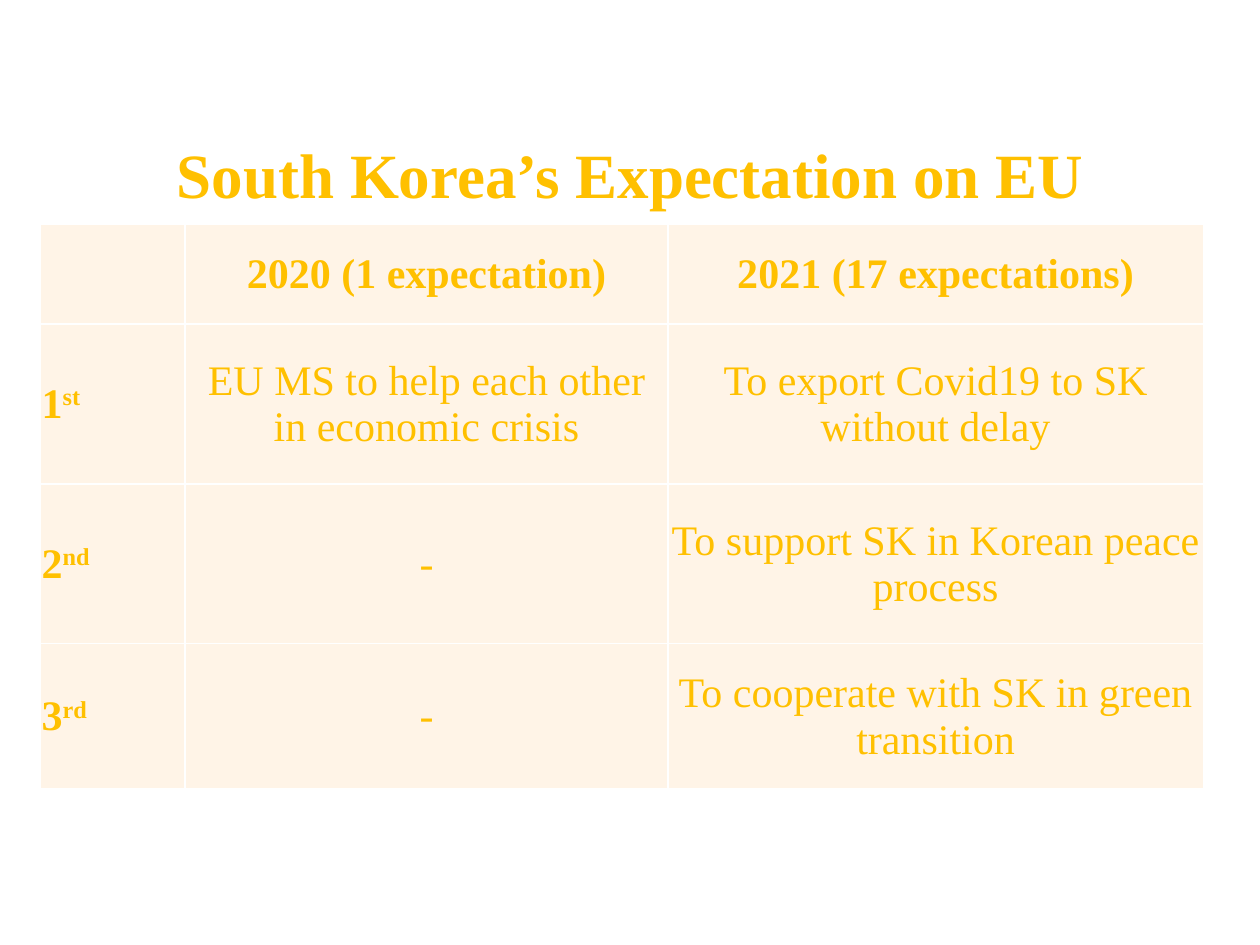
from lxml.etree import SubElement
from pptx import Presentation
from pptx.dml.color import RGBColor
from pptx.enum.text import MSO_ANCHOR, PP_ALIGN
from pptx.oxml.ns import qn
from pptx.util import Inches, Pt

TITLE = "South Korea’s Expectation on EU"
HEADINGS = ["", "2020 (1 expectation)", "2021 (17 expectations)"]
RANKS = [
    ("1", "st", "EU MS to help each other in economic crisis", "To export Covid19 to SK without delay"),
    ("2", "nd", "-", "To support SK in Korean peace process"),
    ("3", "rd", "-", "To cooperate with SK in green transition"),
]
COLUMN_WIDTHS = [1.15, 3.83, 4.25]
ROW_HEIGHTS = [0.79, 1.27, 1.27, 1.15]
GOLD, CREAM, WHITE = "FFC000", "FFF4E7", "FFFFFF"


def color(value):
    return RGBColor.from_string(value)


def add_text(paragraph, text, size=24, bold=False, raised=False, align=PP_ALIGN.CENTER):
    paragraph.alignment = align
    run = paragraph.add_run()
    run.text = text
    run.font.name = "Times New Roman"
    run.font.size = Pt(size)
    run.font.bold = bold
    run.font.color.rgb = color(GOLD)
    if raised:
        run.font._element.set("baseline", "30000")


def style_cell(cell):
    cell.vertical_anchor = MSO_ANCHOR.MIDDLE
    cell.margin_left = cell.margin_right = cell.margin_top = Inches(0.01)
    cell.margin_bottom = 0
    properties = cell._tc.get_or_add_tcPr()
    for side in ("a:lnL", "a:lnR", "a:lnT", "a:lnB"):
        border = SubElement(properties, qn(side), w=str(Pt(1)))
        solid = SubElement(border, qn("a:solidFill"))
        SubElement(solid, qn("a:srgbClr"), val=WHITE)
    cell.fill.solid()
    cell.fill.fore_color.rgb = color(CREAM)


def add_title(slide):
    box = slide.shapes.add_textbox(Inches(0.32), Inches(0.94), Inches(9.36), Inches(0.95))
    frame = box.text_frame
    frame.word_wrap = True
    frame.vertical_anchor = MSO_ANCHOR.MIDDLE
    paragraph = frame.paragraphs[0]
    paragraph.line_spacing = 0.9
    add_text(paragraph, TITLE, size=36, bold=True)


def add_expectations(slide):
    table = slide.shapes.add_table(
        len(ROW_HEIGHTS), len(COLUMN_WIDTHS), Inches(0.32), Inches(1.78),
        Inches(sum(COLUMN_WIDTHS)), Inches(sum(ROW_HEIGHTS)),
    ).table
    for column, width in zip(table.columns, COLUMN_WIDTHS):
        column.width = Inches(width)
    for row, height in zip(table.rows, ROW_HEIGHTS):
        row.height = Inches(height)
    for cell in table.iter_cells():
        style_cell(cell)
    for column, heading in enumerate(HEADINGS):
        if heading:
            add_text(table.cell(0, column).text_frame.paragraphs[0], heading, bold=True)
    for row, (number, suffix, *expectations) in enumerate(RANKS, start=1):
        rank = table.cell(row, 0).text_frame.paragraphs[0]
        add_text(rank, number, bold=True, align=PP_ALIGN.LEFT)
        add_text(rank, suffix, bold=True, raised=True, align=PP_ALIGN.LEFT)
        for column, expectation in enumerate(expectations, start=1):
            add_text(table.cell(row, column).text_frame.paragraphs[0], expectation)


def main():
    presentation = Presentation()
    presentation.slide_width = Inches(10)
    presentation.slide_height = Inches(7.5)
    slide = presentation.slides.add_slide(presentation.slide_layouts[6])
    add_title(slide)
    add_expectations(slide)
    presentation.save("out.pptx")


if __name__ == "__main__":
    main()
